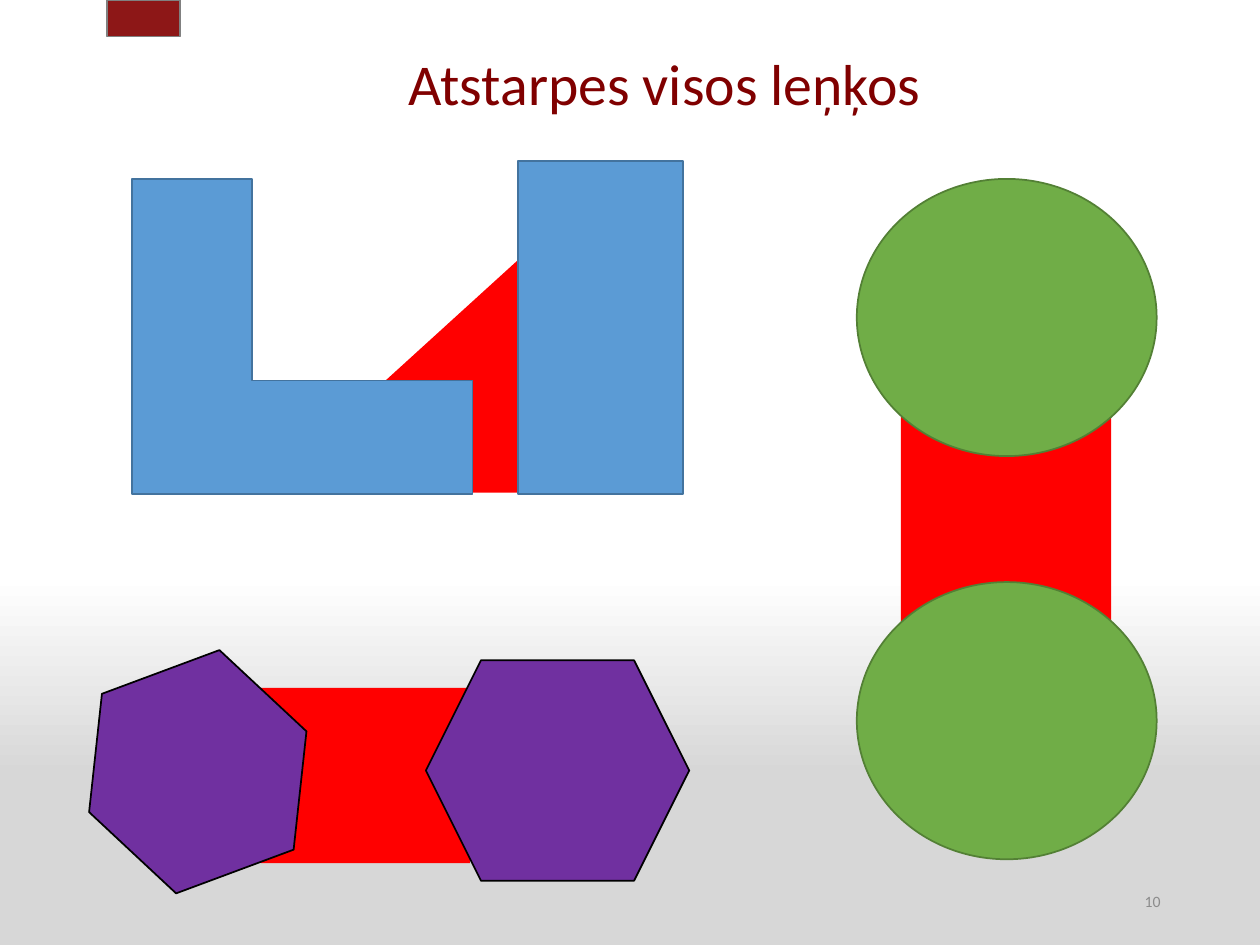
from lxml.etree import SubElement
from pptx import Presentation
from pptx.dml.color import RGBColor
from pptx.enum.shapes import MSO_SHAPE as S
from pptx.enum.text import MSO_ANCHOR, PP_ALIGN
from pptx.oxml.ns import qn
from pptx.util import Inches, Pt

HEX = {
    "red": "FF0000", "maroon": "800000", "brick": "8D1717",
    "gray": "808080", "pale": "8C8C8C", "black": "000000",
    "purple": "7030A0", "blue": "5B9BD5", "navy": "43739E",
    "green": "70AD47", "moss": "538035",
}
# Background stops: percent, colour
STOPS = [(0, "FFFFFF"), (61, "FFFFFF"), (82, "D7D7D7"), (100, "D9D9D9")]

# Gaps between the figures: box, rotation
GAPS = [
    ((7.15, 3.26, 1.67, 1.75), 0),
    ((2.07, 5.46, 1.66, 1.39), 0),
    ((3.43, 2.73, 1.57, 1.18), 0),
    ((3.24, 2.35, 1.57, 1.18), 317.7),
]
# Figures: kind, box, fill, line, rotation, adjustments
FIGURES = [
    (S.RECTANGLE, (0.85, 0, 0.58, 0.29), "brick", "gray", 0, ()),
    (S.HEXAGON, (0.65, 5.28, 1.84, 1.69), "purple", "black", 339.6, ()),
    (S.HEXAGON, (3.38, 5.24, 2.09, 1.75), "purple", "black", 0, ()),
    (S.CORNER, (1.05, 1.42, 2.7, 2.5), "blue", "navy", 0, (0.36, 0.38)),
    (S.RECTANGLE, (4.11, 1.28, 1.31, 2.64), "blue", "navy", 0, ()),
] + [(S.OVAL, (6.8, top, 2.38, 2.2), "green", "moss", 0, ())
     for top in (1.42, 4.62)]
# Texts: wording, box, size, colour, alignment, line spacing
TEXTS = [
    ("Atstarpes visos leņķos", (1.37, 0.35, 7.81, 0.67), 33, "maroon",
     PP_ALIGN.CENTER, 0.9),
    ("10", (7.06, 6.95, 2.25, 0.4), 9, "pale", PP_ALIGN.RIGHT, 1.0),
]


def color(name):
    return RGBColor.from_string(HEX[name])


def place(box):
    return [Inches(n) for n in box]


def add_figure(slide, kind, box, fill, line=None, turn=0, adjust=()):
    shape = slide.shapes.add_shape(kind, *place(box))
    shape.shadow.inherit = False
    shape.rotation = turn
    for i, value in enumerate(adjust):
        shape.adjustments[i] = value
    shape.fill.solid()
    shape.fill.fore_color.rgb = color(fill)
    if line:
        shape.line.color.rgb = color(line)
        shape.line.width = Pt(1)
    else:
        shape.line.fill.background()


def add_text(slide, words, box, size, tint, align, space):
    frame = slide.shapes.add_textbox(*place(box)).text_frame
    frame.word_wrap = True
    frame.vertical_anchor = MSO_ANCHOR.MIDDLE
    para = frame.paragraphs[0]
    para.alignment = align
    para.line_spacing = space
    run = para.add_run()
    run.text = words
    run.font.name = "Calibri"
    run.font.size = Pt(size)
    run.font.color.rgb = color(tint)


def paint_back(slide):
    fill = slide.background.fill
    fill.gradient()
    fill.gradient_angle = 270
    stops = next(slide.element.iter(qn("a:gsLst")))
    for old in list(stops):
        stops.remove(old)
    for part, tint in STOPS:
        stop = SubElement(stops, qn("a:gs"), pos=str(part * 1000))
        SubElement(stop, qn("a:srgbClr"), val=tint)


def main():
    deck = Presentation()
    deck.slide_width, deck.slide_height = Inches(10), Inches(7.5)
    slide = deck.slides.add_slide(deck.slide_layouts[6])
    paint_back(slide)
    # Red gaps lie behind everything else
    for box, turn in GAPS:
        add_figure(slide, S.RECTANGLE, box, "red", turn=turn)
    for text in TEXTS:
        add_text(slide, *text)
    for figure in FIGURES:
        add_figure(slide, *figure)
    deck.save("out.pptx")


if __name__ == "__main__":
    main()
